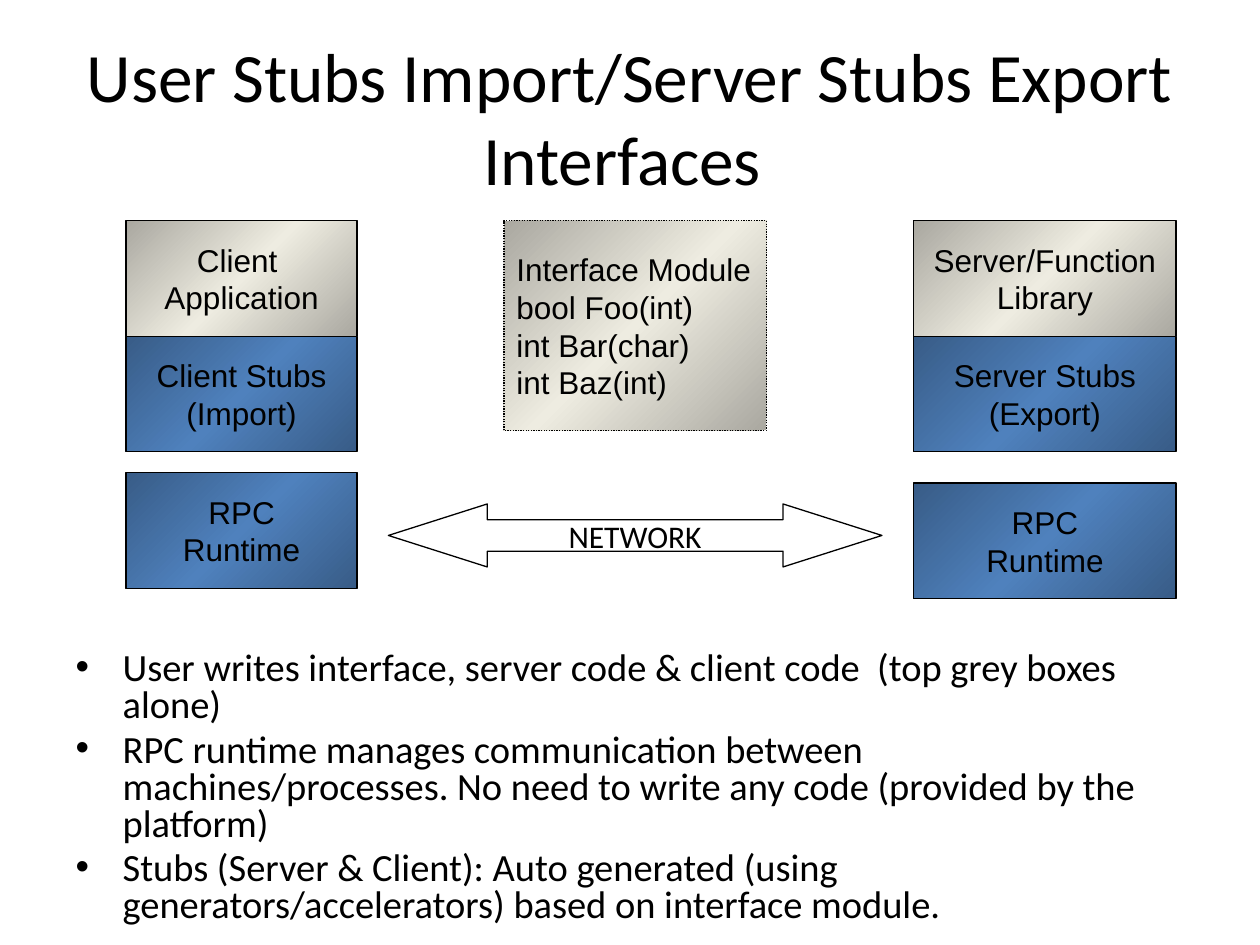
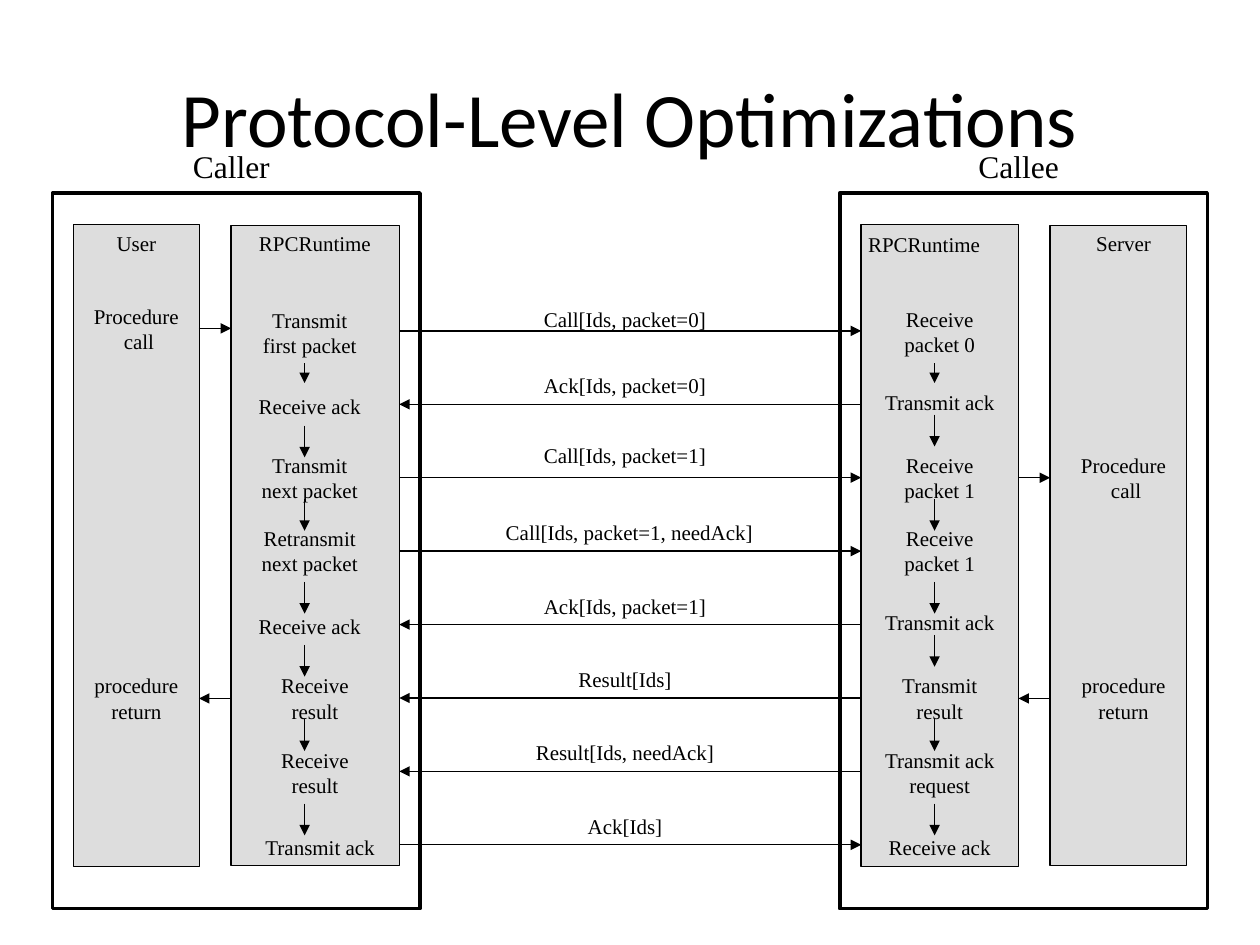
"""Builds two slides on remote procedure call stubs and protocol optimizations."""
from lxml import etree
from pptx import Presentation
from pptx.dml.color import RGBColor
from pptx.enum.dml import MSO_LINE
from pptx.enum.shapes import MSO_CONNECTOR, MSO_SHAPE
from pptx.enum.text import MSO_ANCHOR, MSO_AUTO_SIZE, PP_ALIGN
from pptx.oxml.ns import qn
from pptx.util import Cm, Pt

RECTANGLE = MSO_SHAPE.RECTANGLE
DOUBLE_ARROW = MSO_SHAPE.LEFT_RIGHT_ARROW
STRAIGHT = MSO_CONNECTOR.STRAIGHT
DOTTED = MSO_LINE.ROUND_DOT
CENTER, LEFT = PP_ALIGN.CENTER, PP_ALIGN.LEFT
MIDDLE, TOP = MSO_ANCHOR.MIDDLE, MSO_ANCHOR.TOP
NO_FIT, GROW = MSO_AUTO_SIZE.NONE, MSO_AUTO_SIZE.SHAPE_TO_FIT_TEXT

BLACK, WHITE, COLUMN_GREY = "000000", "FFFFFF", "DDDDDD"
GREY, BLUE = "EEECE1", "4F81BD"
TITLE_FONT, BOX_FONT, DIAGRAM_FONT = "Calibri", "Arial", "Times New Roman"
EDGE_SHADE = "46275"
TITLE_AND_BODY, TITLE_ONLY = 1, 5


def color(hex_string):
    return RGBColor.from_string(hex_string)


class Deck:
    def __init__(self):
        self.presentation = Presentation()
        self.presentation.slide_width = Cm(25.4)
        self.presentation.slide_height = Cm(19.05)
        self.slide = None

    def add_slide(self, layout, title, size):
        layouts = self.presentation.slide_layouts
        self.slide = self.presentation.slides.add_slide(layouts[layout])
        shape = self.slide.shapes.title
        self.place(shape, 1.27, 0.76, 22.86, 3.18)
        shape.text_frame.text = title
        self.format_text(shape.text_frame, TITLE_FONT, size)
        shape.text_frame.auto_size = NO_FIT

    def place(self, shape, left, top, width, height):
        shape.left, shape.top = Cm(left), Cm(top)
        shape.width, shape.height = Cm(width), Cm(height)

    def format_text(self, text_frame, font, size, align=CENTER, anchor=MIDDLE):
        text_frame.vertical_anchor = anchor
        for paragraph in text_frame.paragraphs:
            paragraph.alignment = align
            for run in paragraph.runs:
                run.font.name = font
                run.font.size = Pt(size)
                run.font.color.rgb = color(BLACK)

    def bullets(self, items, left, top, width, height):
        shape = self.slide.placeholders[1]
        self.place(shape, left, top, width, height)
        text_frame = shape.text_frame
        text_frame.text = "\n".join(items)
        self.format_text(text_frame, TITLE_FONT, 22, LEFT, TOP)
        text_frame.auto_size = NO_FIT
        for paragraph in text_frame.paragraphs:
            paragraph.line_spacing = 0.8
            properties = paragraph._p.get_or_add_pPr()
            properties.set("marL", str(Cm(0.95)))
            properties.set("indent", str(-Cm(0.95)))

    def box(self, left, top, width, height, fill=None, line=0.75, kind=RECTANGLE):
        shape = self.slide.shapes.add_shape(
            kind, Cm(left), Cm(top), Cm(width), Cm(height))
        shape.shadow.inherit = False
        if fill:
            shape.fill.solid()
            shape.fill.fore_color.rgb = color(fill)
        else:
            shape.fill.background()
        shape.line.color.rgb = color(BLACK)
        shape.line.width = Pt(line)
        return shape

    def caption(self, shape, text, font, align=CENTER):
        shape.text_frame.text = text
        shape.text_frame.word_wrap = False
        self.format_text(shape.text_frame, font, 18, align)

    def gradient_box(self, text, left, top, width, height, fill, align=CENTER):
        shape = self.box(left, top, width, height)
        shape.fill.gradient()
        shape.fill.gradient_angle = 315
        stops = shape._element.spPr.find(qn("a:gradFill")).find(qn("a:gsLst"))
        for stop in list(stops):
            stops.remove(stop)
        for position, shaded in ((0, True), (50000, False), (100000, True)):
            stop = etree.SubElement(stops, qn("a:gs"), pos=str(position))
            stop_color = etree.SubElement(stop, qn("a:srgbClr"), val=fill)
            if shaded:
                etree.SubElement(stop_color, qn("a:shade"), val=EDGE_SHADE)
        self.caption(shape, text, BOX_FONT, align)
        return shape

    def label(self, text, left, top, width, size=12):
        lines = text.count("\n") + 1
        shape = self.slide.shapes.add_textbox(
            Cm(left), Cm(top), Cm(width), Cm(0.25 + 0.51 * lines))
        text_frame = shape.text_frame
        text_frame.paragraphs[0].text = text
        text_frame.word_wrap = True
        text_frame.auto_size = GROW
        self.format_text(text_frame, DIAGRAM_FONT, size, CENTER, TOP)

    def arrow(self, start_x, start_y, end_x, end_y):
        connector = self.slide.shapes.add_connector(
            STRAIGHT, Cm(start_x), Cm(start_y), Cm(end_x), Cm(end_y))
        connector.line.color.rgb = color(BLACK)
        connector.line.width = Pt(0.75)
        properties = connector._element.spPr
        etree.SubElement(properties.find(qn("a:ln")), qn("a:tailEnd"), type="triangle")
        etree.SubElement(properties, qn("a:effectLst"))


def build_stubs_slide(deck):
    deck.add_slide(
        TITLE_AND_BODY, "User Stubs Import/Server Stubs Export Interfaces ", 39.6)
    deck.bullets([
        "User writes interface, server code & client code  (top grey boxes alone)",
        "RPC runtime manages communication between machines/processes. "
        "No need to write any code (provided by the platform)",
        "Stubs (Server & Client): Auto generated (using generators/accelerators) "
        "based on interface module.",
    ], 1.27, 13.02, 22.86, 4.95)

    stacks = [
        (2.54, 4.66, 9.53, "Client \nApplication", "Client Stubs\n(Import)"),
        (18.42, 5.29, 9.74, "Server/Function\nLibrary", "Server Stubs\n(Export)"),
    ]
    for left, width, runtime_top, program, stubs in stacks:
        layers = [(program, 4.45, GREY), (stubs, 6.78, BLUE),
                  ("RPC\nRuntime", runtime_top, BLUE)]
        for text, top, fill in layers:
            deck.gradient_box(text, left, top, width, 2.33, fill)

    interface = deck.gradient_box(
        "Interface Module\nbool Foo(int)\nint Bar(char)\nint Baz(int)",
        10.16, 4.45, 5.29, 4.23, GREY, LEFT)
    interface.line.dash_style = DOTTED

    network = deck.box(7.83, 10.16, 9.95, 1.27, WHITE, kind=DOUBLE_ARROW)
    network.adjustments[0] = 0.5
    network.adjustments[1] = 1.57
    deck.caption(network, "NETWORK", TITLE_FONT)


def build_protocol_slide(deck):
    deck.add_slide(TITLE_ONLY, "Protocol-Level Optimizations", 44)
    for name, left in (("Caller", 1.06), ("Callee", 16.93)):
        deck.box(left, 3.89, 7.41, 14.43, line=2)
        deck.label(name, left + 0.64, 2.84, 5.93, 18)

    columns = [
        ("User", 1.48, 4.52, 2.54, 12.95, 1.27, 4.52),
        ("RPCRuntime", 4.66, 4.55, 3.39, 12.9, 4.87, 4.52),
        ("RPCRuntime", 17.36, 4.52, 3.18, 12.95, 17.15, 4.55),
        ("Server", 21.17, 4.55, 2.75, 12.9, 21.17, 4.52),
    ]
    for name, left, top, width, height, name_left, name_top in columns:
        deck.box(left, top, width, height, COLUMN_GREY)
        deck.label(name, name_left, name_top, 2.96)

    procedure_labels = [
        ("Procedure\n call", 1.27, 5.99), ("procedure return", 1.27, 13.44),
        ("Procedure\n call", 21.17, 8.99), ("procedure return", 21.17, 13.44),
    ]
    for text, left, top in procedure_labels:
        deck.label(text, left, top, 2.96)
    procedure_arrows = [
        (4.01, 4.66, 6.62), (4.66, 4.01, 14.08),
        (20.53, 21.17, 9.63), (21.17, 20.53, 14.08),
    ]
    for start, end, height in procedure_arrows:
        deck.arrow(start, height, end, height)

    caller_steps = [
        ("Transmit first packet", 4.87, 6.07, 2.75),
        ("Receive ack", 4.87, 7.8, 2.75),
        ("Transmit next packet", 4.87, 8.99, 2.75),
        ("Retransmit next packet", 4.87, 10.46, 2.75),
        ("Receive ack", 4.87, 12.24, 2.75),
        ("Receive\nresult", 4.87, 13.44, 2.96),
        ("Receive\nresult", 4.87, 14.94, 2.96),
        ("Transmit ack", 5.08, 16.69, 2.75),
    ]
    callee_steps = [
        ("Receive\npacket 0", 6.05), ("Transmit ack", 7.72),
        ("Receive\npacket 1", 8.99), ("Receive\npacket 1", 10.46),
        ("Transmit ack", 12.17), ("Transmit\nresult", 13.44),
        ("Transmit ack\nrequest", 14.94), ("Receive ack", 16.69),
    ]
    for text, left, top, width in caller_steps:
        deck.label(text, left, top, width)
    for text, top in callee_steps:
        deck.label(text, 17.57, top, 2.75)

    step_arrows = [
        (6.14, (8.58, 10.06, 11.73, 13, 14.5, 16.2)),
        (18.84, (8.36, 10.06, 11.73, 12.8, 14.5, 16.2)),
    ]
    for center, tops in step_arrows:
        deck.arrow(center, 7.32, center, 7.72)
        for top in tops:
            deck.arrow(center, top, center, top + 0.64)

    caller_edge, callee_edge = 8.05, 17.36
    messages = [
        ("Call[Ids, packet=0]", 10.16, 6.05, 4.88, True),
        ("Ack[Ids, packet=0]", 10.16, 7.39, 4.88, False),
        ("Call[Ids, packet=1]", 10.16, 8.79, 4.88, True),
        ("Call[Ids, packet=1, needAck]", 9.73, 10.34, 5.92, True),
        ("Ack[Ids, packet=1]", 10.16, 11.84, 4.88, False),
        ("Result[Ids]", 10.16, 13.31, 4.88, False),
        ("Result[Ids, needAck]", 10.16, 14.78, 4.88, False),
        ("Ack[Ids]", 10.16, 16.28, 4.88, True),
    ]
    for index, (text, left, top, width, to_callee) in enumerate(messages):
        height = 6.67 + 1.48 * index
        start, end = caller_edge, callee_edge
        if not to_callee:
            start, end = end, start
        deck.arrow(start, height, end, height)
        deck.label(text, left, top, width)


def main():
    deck = Deck()
    build_stubs_slide(deck)
    build_protocol_slide(deck)
    deck.presentation.save("out.pptx")


if __name__ == "__main__":
    main()
